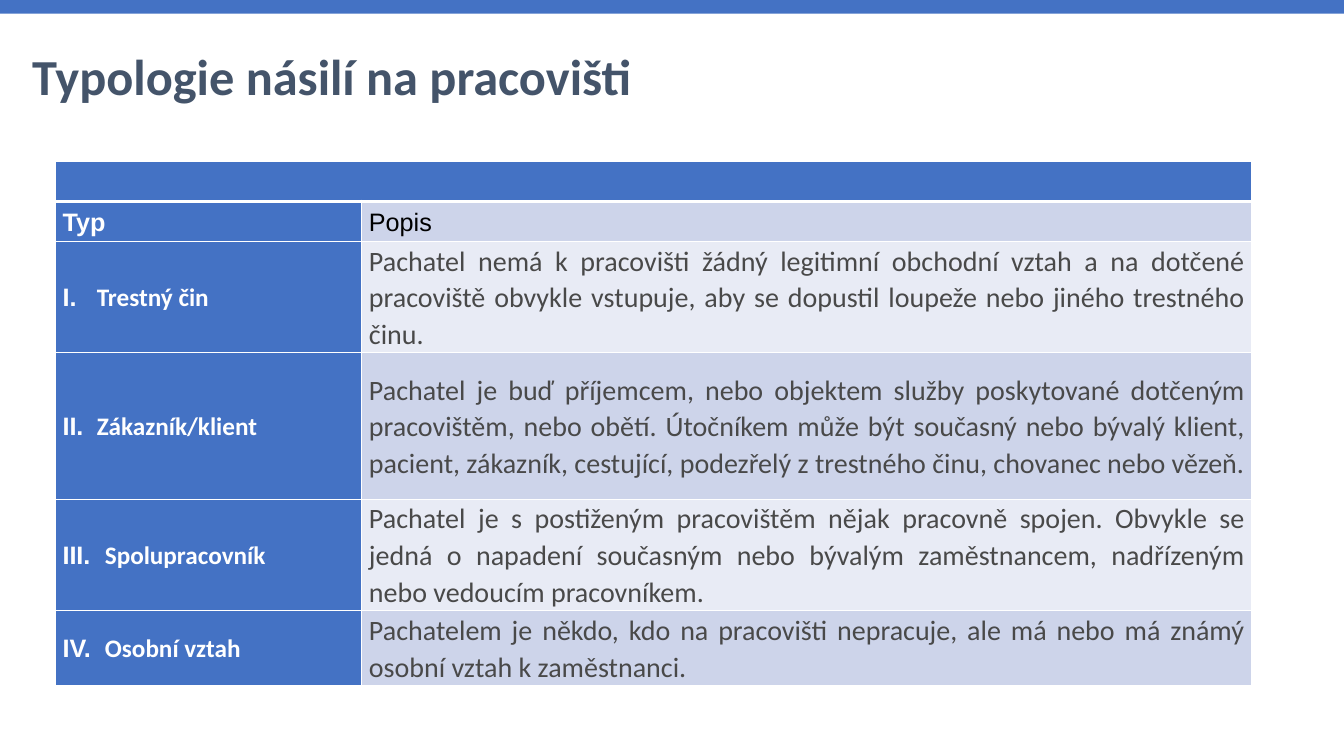
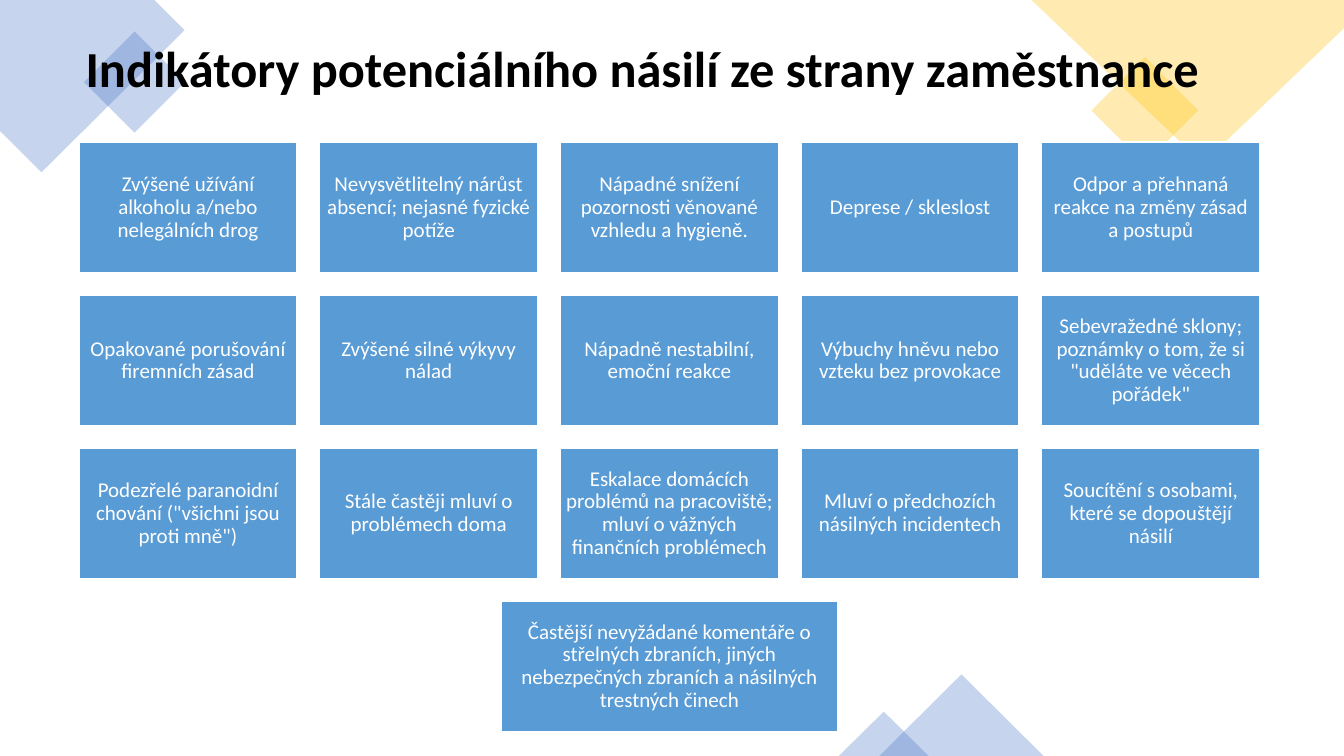
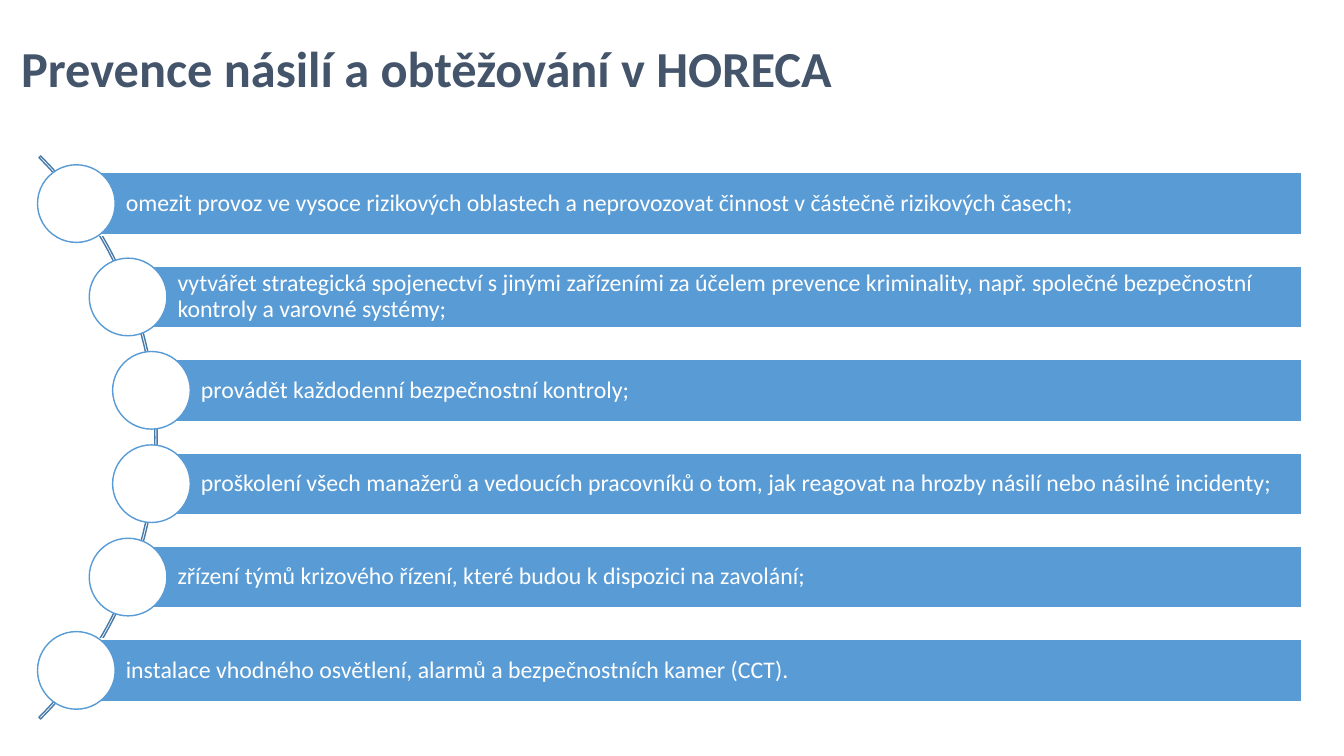
from dataclasses import dataclass

from lxml.etree import SubElement
from pptx import Presentation
from pptx.dml.color import RGBColor
from pptx.enum.shapes import MSO_SHAPE
from pptx.enum.text import MSO_ANCHOR, PP_ALIGN
from pptx.oxml.ns import qn
from pptx.util import Emu, Inches, Pt


@dataclass(frozen=True)
class Theme:
    font: str = "Calibri"
    label_font: str = "Arial"
    white: str = "FFFFFF"
    black: str = "000000"
    slate: str = "44546A"
    body: str = "494949"
    blue: str = "4472C4"
    gold: str = "FFC000"
    sky: str = "599BD5"
    arc: str = "487AA8"
    band_dark: str = "CDD4EA"
    band_light: str = "E8EBF5"
    title_size: int = 36
    body_size: int = 20
    label_size: int = 18
    bar_size: int = 17
    card_size: int = 15
    veil: int = 30
    tight: float = 0.9
    loose: float = 1.07


class SlideBuilder:
    def __init__(self, theme):
        self.theme = theme
        self.deck = Presentation()
        self.deck.slide_width = Inches(13.33)
        self.deck.slide_height = Inches(7.5)
        self.page = None

    def new_page(self):
        self.page = self.deck.slides.add_slide(self.deck.slide_layouts[6])

    def across(self, share):
        return Emu(round(self.deck.slide_width * share / 100))

    def down(self, share):
        return Emu(round(self.deck.slide_height * share / 100))

    def place(self, left, top, width, height):
        return self.across(left), self.down(top), self.across(width), self.down(height)

    def style_font(self, font, size, color, bold=False, name=None):
        font.name = name or self.theme.font
        font.size = Pt(size)
        font.bold = bold
        font.color.rgb = RGBColor.from_string(color)

    def paint(self, shape, fill=None, line=None, line_width=1, opacity=100):
        shape.shadow.inherit = False
        if fill:
            shape.fill.solid()
            shape.fill.fore_color.rgb = RGBColor.from_string(fill)
            if opacity < 100:
                color = shape.fill._xPr.find(qn("a:solidFill"))[0]
                SubElement(color, qn("a:alpha")).set("val", str(opacity * 1000))
        else:
            shape.fill.background()
        if line:
            shape.line.color.rgb = RGBColor.from_string(line)
            shape.line.width = Pt(line_width)
        else:
            shape.line.fill.background()

    def set_text(self, shape, text, size, color, align, anchor, margins, bold=False):
        frame = shape.text_frame
        frame.word_wrap = True
        frame.vertical_anchor = anchor
        frame.margin_left, frame.margin_top, frame.margin_right, frame.margin_bottom = map(Inches, margins)
        para = frame.paragraphs[0]
        para.text = text
        para.alignment = align
        para.line_spacing = self.theme.tight
        self.style_font(para.font, size, color, bold)

    def title(self, text, place, color, anchor=MSO_ANCHOR.MIDDLE):
        box = self.page.shapes.add_textbox(*self.place(*place))
        self.set_text(box, text, self.theme.title_size, color, PP_ALIGN.LEFT, anchor,
                      (0.1, 0.05, 0.1, 0.05), bold=True)

    def shape(self, kind, place, turn=0, **look):
        shape = self.page.shapes.add_shape(kind, *self.place(*place))
        shape.rotation = turn
        self.paint(shape, **look)
        return shape

    def outline(self, points, **look):
        corners = [(self.across(x), self.down(y)) for x, y in points]
        freeform = self.page.shapes.build_freeform(*corners[0])
        freeform.add_line_segments(corners[1:], close=True)
        self.paint(freeform.convert_to_shape(), **look)

    def text_block(self, text, place, size, align, margins):
        block = self.shape(MSO_SHAPE.RECTANGLE, place, fill=self.theme.sky,
                           line=self.theme.white, line_width=1.5)
        self.set_text(block, text, size, self.theme.white, align, MSO_ANCHOR.MIDDLE, margins)

    def card(self, text, place):
        self.text_block(text, place, self.theme.card_size, PP_ALIGN.CENTER, (0.06,) * 4)

    def bar(self, text, place):
        self.text_block(text, place, self.theme.bar_size, PP_ALIGN.LEFT, (0.49, 0.05, 0.05, 0.05))

    def table(self, left, top, columns, rows):
        frame = self.page.shapes.add_table(
            len(rows), len(columns), *self.place(left, top, sum(columns), sum(rows)))
        table = frame.table
        table.first_row = table.horz_banding = False
        for column, width in zip(table.columns, columns):
            column.width = self.across(width)
        for row, height in zip(table.rows, rows):
            row.height = self.down(height)
        return table

    def cell(self, cell, fill, bottom=1, top=1):
        properties = cell._tc.get_or_add_tcPr()
        for side, width in (("L", 1), ("R", 1), ("T", top), ("B", bottom)):
            edge = SubElement(properties, qn(f"a:ln{side}"), w=str(Pt(width)))
            paint = SubElement(edge, qn("a:solidFill"))
            SubElement(paint, qn("a:srgbClr"), val=self.theme.white)
        cell.fill.solid()
        cell.fill.fore_color.rgb = RGBColor.from_string(fill)
        cell.vertical_anchor = MSO_ANCHOR.MIDDLE
        cell.margin_left = cell.margin_right = Inches(0.07)
        cell.margin_top = cell.margin_bottom = 0
        para = cell.text_frame.paragraphs[0]
        para.alignment = PP_ALIGN.JUSTIFY
        para.line_spacing = self.theme.loose
        return para

    def numbered_label(self, para, number, label, indent):
        para.alignment = PP_ALIGN.LEFT
        properties = para._p.get_or_add_pPr()
        properties.set("marL", str(Inches(indent)))
        properties.set("indent", str(-Inches(indent)))
        for text, name in ((f"{number}\t", self.theme.label_font), (label, self.theme.font)):
            span = para.add_run()
            span.text = text
            self.style_font(span.font, self.theme.label_size, self.theme.white, True, name)


VIOLENCE_TYPES = [
    ("I.", "Trestný čin", 0.34,
     "Pachatel nemá k pracovišti žádný legitimní obchodní vztah a na dotčené pracoviště obvykle "
     "vstupuje, aby se dopustil loupeže nebo jiného trestného činu."),
    ("II.", "Zákazník/klient", 0.34,
     "Pachatel je buď příjemcem, nebo objektem služby poskytované dotčeným pracovištěm, nebo obětí. "
     "Útočníkem může být současný nebo bývalý klient, pacient, zákazník, cestující, podezřelý "
     "z trestného činu, chovanec nebo vězeň."),
    ("III.", "Spolupracovník", 0.42,
     "Pachatel je s postiženým pracovištěm nějak pracovně spojen. Obvykle se jedná o napadení "
     "současným nebo bývalým zaměstnancem, nadřízeným nebo vedoucím pracovníkem."),
    ("IV.", "Osobní vztah", 0.42,
     "Pachatelem je někdo, kdo na pracovišti nepracuje, ale má nebo má známý osobní vztah "
     "k zaměstnanci."),
]

INDICATORS = [
    "Zvýšené užívání alkoholu a/nebo nelegálních drog",
    "Nevysvětlitelný nárůst absencí; nejasné fyzické potíže",
    "Nápadné snížení pozornosti věnované vzhledu a hygieně.",
    "Deprese / skleslost",
    "Odpor a přehnaná reakce na změny zásad a postupů",
    "Opakované porušování firemních zásad",
    "Zvýšené silné výkyvy nálad",
    "Nápadně nestabilní, emoční reakce",
    "Výbuchy hněvu nebo vzteku bez provokace",
    'Sebevražedné sklony; poznámky o tom, že si "uděláte ve věcech pořádek"',
    'Podezřelé paranoidní chování ("všichni jsou proti mně")',
    "Stále častěji mluví o problémech doma",
    "Eskalace domácích problémů na pracoviště; mluví o vážných finančních problémech",
    "Mluví o předchozích násilných incidentech",
    "Soucítění s osobami, které se dopouštějí násilí",
]
WEAPONS_INDICATOR = ("Častější nevyžádané komentáře o střelných zbraních, jiných nebezpečných "
                     "zbraních a násilných trestných činech")

MEASURES = [
    "omezit provoz ve vysoce rizikových oblastech a neprovozovat činnost v částečně rizikových časech;",
    "vytvářet strategická spojenectví s jinými zařízeními za účelem prevence kriminality, "
    "např. společné bezpečnostní kontroly a varovné systémy;",
    "provádět každodenní bezpečnostní kontroly;",
    "proškolení všech manažerů a vedoucích pracovníků o tom, jak reagovat na hrozby násilí "
    "nebo násilné incidenty;",
    "zřízení týmů krizového řízení, které budou k dispozici na zavolání;",
    "instalace vhodného osvětlení, alarmů a bezpečnostních kamer (CCT).",
]


def typology(builder):
    theme = builder.theme
    builder.new_page()
    builder.title("Typologie násilí na pracovišti", (1.65, 4.27, 91.5, 10.4), theme.slate, MSO_ANCHOR.BOTTOM)
    builder.shape(MSO_SHAPE.RECTANGLE, (0, 0, 100, 1.8), fill=theme.blue)
    table = builder.table(4.13, 21.33, (22.8, 66.23), (5.33, 5.33, 14.67, 19.4, 14.67, 10))
    for column in (0, 1):
        builder.cell(table.cell(0, column), theme.blue, bottom=3)
    table.cell(0, 0).merge(table.cell(0, 1))
    headings = (("Typ", theme.blue, theme.white, True), ("Popis", theme.band_dark, theme.black, False))
    for column, (text, fill, color, bold) in enumerate(headings):
        para = builder.cell(table.cell(1, column), fill, top=3)
        para.text = text
        builder.style_font(para.font, theme.label_size, color, bold, theme.label_font)
    for row, (number, label, indent, description) in enumerate(VIOLENCE_TYPES, 2):
        builder.numbered_label(builder.cell(table.cell(row, 0), theme.blue), number, label, indent)
        para = builder.cell(table.cell(row, 1), theme.band_dark if row % 2 else theme.band_light)
        para.text = description
        builder.style_font(para.font, theme.body_size, theme.body)


def indicators(builder):
    theme = builder.theme
    builder.new_page()
    blue = {"fill": theme.blue, "opacity": theme.veil}
    gold = {"fill": theme.gold, "opacity": theme.veil}
    builder.outline([(0, 0), (11.48, 0), (13.73, 4), (3.08, 22.8), (0, 17.33)], **blue)
    builder.shape(MSO_SHAPE.RECTANGLE, (7.35, 6.13, 5.33, 9.47), turn=315, **blue)
    builder.shape(MSO_SHAPE.RECTANGLE, (82.37, 9.6, 5.63, 10), turn=315, **gold)
    builder.outline([(100, 0), (76.74, 0), (89.5, 21.6), (100, 3.73)], **gold)
    for left, width, height in ((65.42, 12.23, 10.8), (62.42, 6.68, 5.87)):
        builder.shape(MSO_SHAPE.ISOSCELES_TRIANGLE, (left, 100 - height, width, height), **blue)
    builder.title("Indikátory potenciálního násilí ze strany zaměstnance",
                  (5.63, 1.2, 88.82, 16.4), theme.black)

    left, top, width, height = 5.85, 18.8, 16.28, 17.33
    column_step, row_step, per_row = 17.91, 20.23, 5
    for index, text in enumerate(INDICATORS):
        row, column = divmod(index, per_row)
        builder.card(text, (left + column * column_step, top + row * row_step, width, height))
    wide = 25.13
    centre = left + 2 * column_step + width / 2
    builder.card(WEAPONS_INDICATOR, (centre - wide / 2, top + 3 * row_step, wide, height))


def prevention(builder):
    theme = builder.theme
    builder.new_page()
    builder.title("Prevence násilí a obtěžování v HORECA", (0.83, 1.2, 88.82, 16.4), theme.slate)
    arc = builder.shape(MSO_SHAPE.BLOCK_ARC, (-47.56, 5.2, 59.26, 105.33), line=theme.arc)
    for index, value in enumerate((189, 27, 0.003)):
        arc.adjustments[index] = value

    right, top, step, height = 96.85, 22.8, 12.35, 8.27
    dot_width, dot_height = 5.78, 10.27
    curve = (5.68, 9.53, 11.27)
    for index, (text, left) in enumerate(zip(MEASURES, curve + curve[::-1])):
        bar_top = top + index * step
        builder.bar(text, (left, bar_top, right - left, height))
        dot = (left - dot_width / 2, bar_top + (height - dot_height) / 2, dot_width, dot_height)
        builder.shape(MSO_SHAPE.OVAL, dot, fill=theme.white, line=theme.sky)


def main():
    builder = SlideBuilder(Theme())
    for build in (typology, indicators, prevention):
        build(builder)
    builder.deck.save("out.pptx")


if __name__ == "__main__":
    main()
